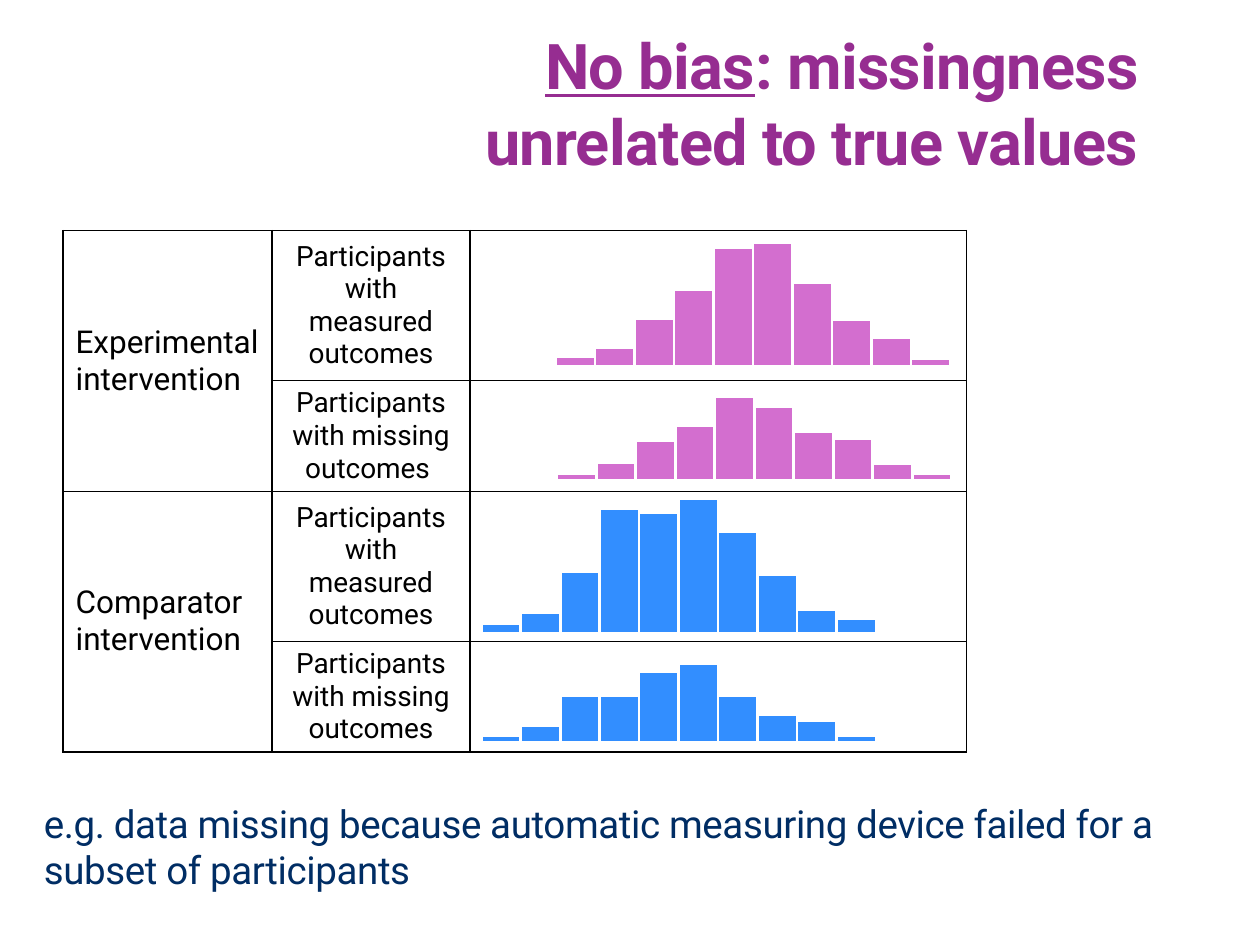
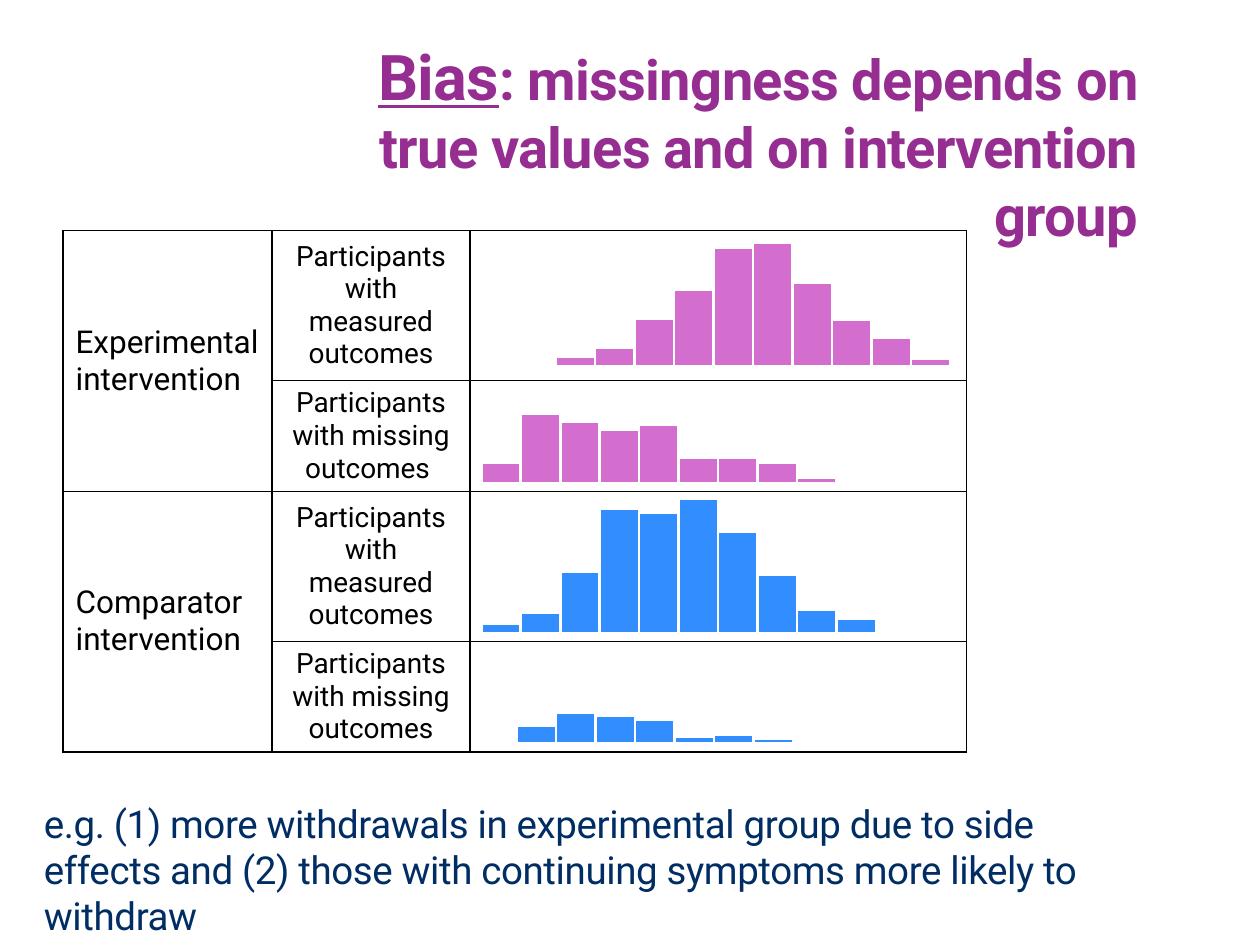
from dataclasses import dataclass

from lxml.etree import SubElement
from pptx import Presentation
from pptx.dml.color import RGBColor
from pptx.enum.shapes import MSO_SHAPE
from pptx.enum.text import MSO_ANCHOR, MSO_AUTO_SIZE, PP_ALIGN
from pptx.oxml.ns import qn
from pptx.util import Inches, Pt

FONT = "Roboto"
PLUM, NAVY, BLACK, WHITE = "962D91", "002D64", "000000", "FFFFFF"
PINK, BLUE = "D36ECF", "328EFF"
COLS = (1.66, 1.57, 3.94)
ROWS = (1.19, 0.88, 1.19, 0.88)
ARMS = ("Experimental intervention", "Comparator intervention")
GROUPS = (
    "Participants with measured outcomes",
    "Participants with missing outcomes ",
    "Participants with measured outcomes",
    "Participants with missing outcomes",
)
BAR = Inches(2.82) / 9


@dataclass(frozen=True)
class Plot:
    left: float
    base: float
    color: str
    bars: tuple[float, ...]


@dataclass(frozen=True)
class Page:
    lead: str
    rest: str
    size: int
    left: float
    top: float
    width: float
    note: str
    plots: tuple[Plot, ...]


SHARED = (
    Plot(4.41, 2.91, PINK, (0.08, 0.15, 0.38, 0.61, 0.94, 0.98, 0.67, 0.37, 0.23, 0.06)),
    Plot(3.82, 5.03, BLUE, (0.08, 0.17, 0.49, 0.99, 0.96, 1.07, 0.81, 0.47, 0.19, 0.12)),
)
PAGES = (
    Page(
        "No bias", ": missingness unrelated to true values", 36, 2.64, 0.21, 6.49,
        "e.g. data missing because automatic measuring device failed for a subset of participants",
        (
            Plot(4.42, 3.81, PINK, (0.05, 0.14, 0.31, 0.43, 0.66, 0.58, 0.38, 0.33, 0.13, 0.05)),
            Plot(3.82, 5.89, BLUE, (0.05, 0.13, 0.37, 0.37, 0.56, 0.62, 0.37, 0.22, 0.17, 0.05)),
        ),
    ),
    Page(
        "Bias", ": missingness depends on true values and on intervention group", 32, 2.26, 0.53, 6.87,
        "e.g. (1) more withdrawals in experimental group due to side effects and (2) those with "
        "continuing symptoms more likely to withdraw",
        (
            Plot(4.1, 5.9, BLUE, (0.14, 0.24, 0.22, 0.19, 0.05, 0.07, 0.04)),
            Plot(3.82, 3.84, PINK, (0.17, 0.56, 0.49, 0.43, 0.47, 0.21, 0.21, 0.17, 0.05)),
        ),
    ),
)


def paint(code: str) -> RGBColor:
    return RGBColor.from_string(code)


def apply(item, values: dict) -> None:
    for name, value in values.items():
        setattr(item, name, value)


def write(para, text: str, size: int, color: str, space: int = 0, **extra) -> None:
    run = para.add_run()
    run.text = text
    apply(run.font, {"name": FONT, "size": Pt(size), **extra})
    run.font.color.rgb = paint(color)
    if space:
        run._r.get_or_add_rPr().set("spc", str(space))


def place(shape, left: float, top: float, width: float, height: float) -> None:
    apply(shape, {"left": Inches(left), "top": Inches(top),
                  "width": Inches(width), "height": Inches(height)})


def head(slide, page: Page) -> None:
    title = slide.shapes.title
    place(title, page.left, page.top, page.width, 1.2)
    apply(title.text_frame, {"word_wrap": True, "auto_size": MSO_AUTO_SIZE.NONE,
                             "vertical_anchor": MSO_ANCHOR.MIDDLE})
    para = title.text_frame.paragraphs[0]
    para.alignment = PP_ALIGN.RIGHT
    write(para, page.lead, 36, PLUM, -40, bold=True, underline=True)
    write(para, page.rest, page.size, PLUM, -40, bold=True, underline=False)


def frame(cell) -> None:
    props = cell._tc.get_or_add_tcPr()
    for side in ("a:lnL", "a:lnR", "a:lnT", "a:lnB"):
        line = SubElement(props, qn(side), w=str(Pt(1)))
        fill = SubElement(line, qn("a:solidFill"))
        SubElement(fill, qn("a:srgbClr"), val=BLACK)
    cell.fill.background()


def label(cell, text: str, size: int, align) -> None:
    cell.vertical_anchor = MSO_ANCHOR.MIDDLE
    para = cell.text_frame.paragraphs[0]
    para.alignment = align
    write(para, text, size, BLACK)


def grid(slide) -> None:
    table = slide.shapes.add_table(
        len(ROWS), len(COLS), Inches(0.5), Inches(1.83),
        Inches(sum(COLS)), Inches(sum(ROWS))).table
    apply(table, {"first_row": False, "horz_banding": False})
    for col, width in zip(table.columns, COLS):
        col.width = Inches(width)
    for row, height in zip(table.rows, ROWS):
        row.height = Inches(height)
    for cell in table.iter_cells():
        frame(cell)
    for i, text in enumerate(ARMS):
        cell = table.cell(2 * i, 0)
        cell.merge(table.cell(2 * i + 1, 0))
        cell.margin_right = Inches(0.05)
        label(cell, text, 18, PP_ALIGN.LEFT)
    for i, text in enumerate(GROUPS):
        label(table.cell(i, 1), text, 16, PP_ALIGN.CENTER)


def draw(slide, plot: Plot) -> None:
    group = slide.shapes.add_group_shape()
    for i, height in enumerate(plot.bars):
        bar = group.shapes.add_shape(
            MSO_SHAPE.RECTANGLE, Inches(plot.left) + round(i * BAR),
            Inches(plot.base - height), round(BAR), Inches(height))
        bar.shadow.inherit = False
        bar.fill.solid()
        bar.fill.fore_color.rgb = paint(plot.color)
        bar.line.color.rgb = paint(WHITE)
        bar.line.width = Pt(1.5)


def remark(slide, text: str) -> None:
    box = slide.shapes.add_textbox(Inches(0.25), Inches(6.3), Inches(9.01), Inches(0.98))
    box.text_frame.word_wrap = True
    write(box.text_frame.paragraphs[0], text, 22, NAVY, -20)


def main() -> None:
    deck = Presentation()
    apply(deck, {"slide_width": Inches(10), "slide_height": Inches(7.5)})
    for page in PAGES:
        slide = deck.slides.add_slide(deck.slide_layouts[5])
        head(slide, page)
        grid(slide)
        for plot in SHARED + page.plots:
            draw(slide, plot)
        remark(slide, page.note)
    deck.save("out.pptx")


if __name__ == "__main__":
    main()
